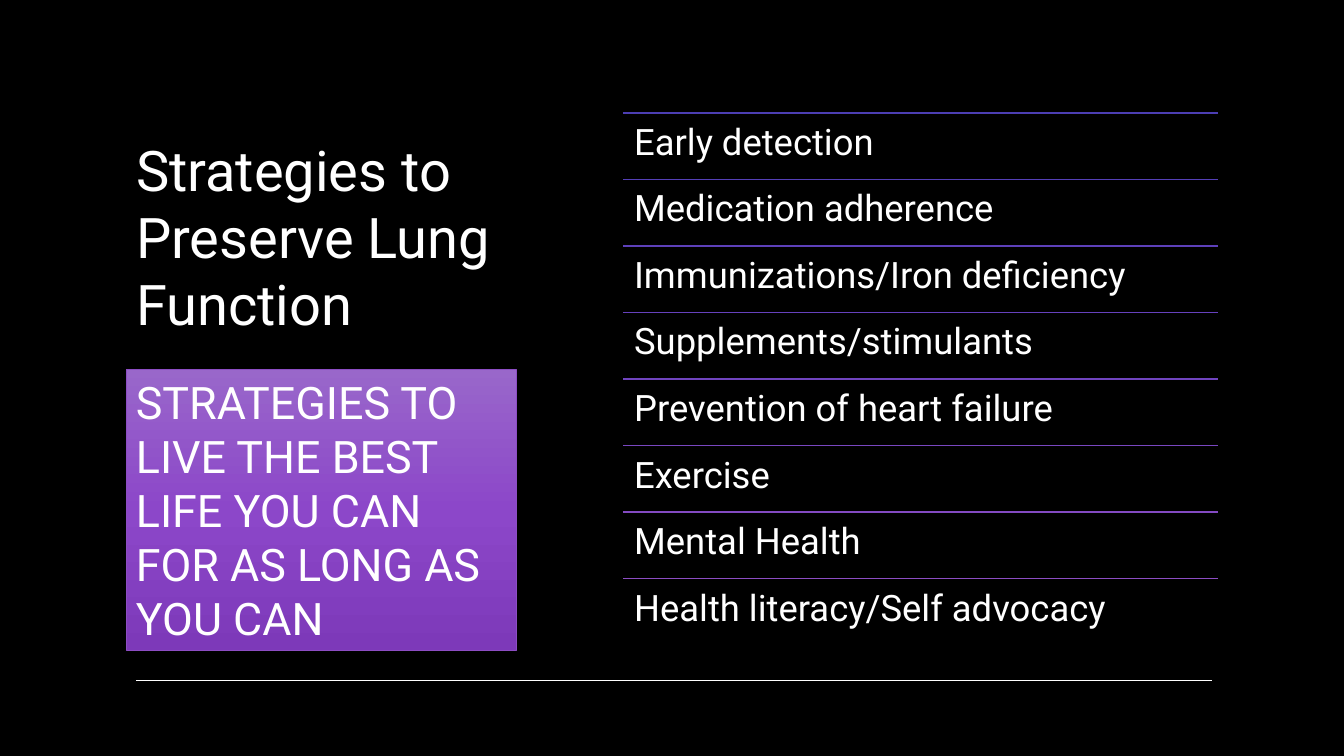
from copy import deepcopy

from pptx import Presentation
from pptx.dml.color import RGBColor as RGB
from pptx.enum.shapes import MSO_CONNECTOR as Connector, MSO_SHAPE as Shape
from pptx.enum.text import MSO_ANCHOR as Anchor, MSO_AUTO_SIZE as AutoSize, PP_ALIGN as Align
from pptx.oxml.ns import qn
from pptx.util import Inches, Pt
from lxml import etree

COLORS = {"background": "000000", "text": "FFFFFF", "box_line": "8C4DC3"}
BOX_GRADIENT = {0: "9967CA", 0.5: "8C47C9", 1: "7D39B9"}
# Each strategy with the colour of the rule above it
STRATEGIES = {
    "Early detection": "4C3EB3",
    "Medication adherence": "543FB6",
    "Immunizations/Iron deficiency": "5D40BA",
    "Supplements/stimulants": "6641BD",
    "Prevention of heart failure": "7044BF",
    "Exercise": "7947C0",
    "Mental Health": "834AC2",
    "Health literacy/Self advocacy": "8C4DC3",
}
LIST_LEFT, LIST_TOP, LIST_WIDTH, ROW_HEIGHT = 6.18, 1.12, 5.9, 0.66


def write(shape, text, size, inset=(0.1, 0.05), anchor=Anchor.TOP, spacing=1.0):
    frame = shape.text_frame
    frame.word_wrap = True
    frame.auto_size = AutoSize.NONE
    frame.vertical_anchor = anchor
    frame.margin_left = frame.margin_right = Inches(inset[0])
    frame.margin_top = frame.margin_bottom = Inches(inset[1])
    frame.text = text
    paragraph = frame.paragraphs[0]
    paragraph.alignment = Align.LEFT
    paragraph.line_spacing = spacing
    paragraph.space_before = Pt(0)
    font = paragraph.runs[0].font
    font.name, font.size = "Roboto", Pt(size)
    font.color.rgb = RGB.from_string(COLORS["text"])


def draw_rule(left, right, y, color):
    rule = slide.shapes.add_connector(
        Connector.STRAIGHT, Inches(left), Inches(y), Inches(right), Inches(y))
    rule.line.color.rgb = RGB.from_string(color)
    rule.line.width = Pt(1)
    etree.SubElement(rule._element.spPr, qn("a:effectLst"))


presentation = Presentation()
presentation.slide_width, presentation.slide_height = Inches(13.33), Inches(7.5)
slide = presentation.slides.add_slide(presentation.slide_layouts[5])
slide.background.fill.solid()
slide.background.fill.fore_color.rgb = RGB.from_string(COLORS["background"])

# Title
title = slide.shapes.title
title.left, title.top = Inches(1.25), Inches(1.29)
title.width, title.height = Inches(4.26), Inches(2.75)
write(title, "Strategies to Preserve Lung Function", 40)

# Bottom rule
draw_rule(1.35, 12.02, 6.75, COLORS["text"])

# Strategy list, one ruled row each
for row, (strategy, color) in enumerate(STRATEGIES.items()):
    top = LIST_TOP + row * ROW_HEIGHT
    draw_rule(LIST_LEFT, LIST_LEFT + LIST_WIDTH, top, color)
    row_box = slide.shapes.add_textbox(
        Inches(LIST_LEFT), Inches(top), Inches(LIST_WIDTH), Inches(ROW_HEIGHT))
    write(row_box, strategy, 26, inset=(0.11, 0.11), spacing=0.9)

# Gradient message box
message = slide.shapes.add_shape(
    Shape.RECTANGLE, Inches(1.25), Inches(3.66), Inches(3.87), Inches(2.79))
message.shadow.inherit = False
message.line.color.rgb = RGB.from_string(COLORS["box_line"])
message.line.width = Pt(0.5)
message.fill.gradient()
message.fill.gradient_angle = 270
stop_list = message._element.spPr.find(qn("a:gradFill")).find(qn("a:gsLst"))
stop_list.append(deepcopy(stop_list[0]))
for stop, (position, color) in zip(message.fill.gradient_stops, BOX_GRADIENT.items()):
    stop.position = position
    stop.color.rgb = RGB.from_string(color)
write(message, "STRATEGIES TO LIVE THE BEST LIFE YOU CAN FOR AS LONG AS YOU CAN", 32,
      anchor=Anchor.MIDDLE)

presentation.save("out.pptx")
